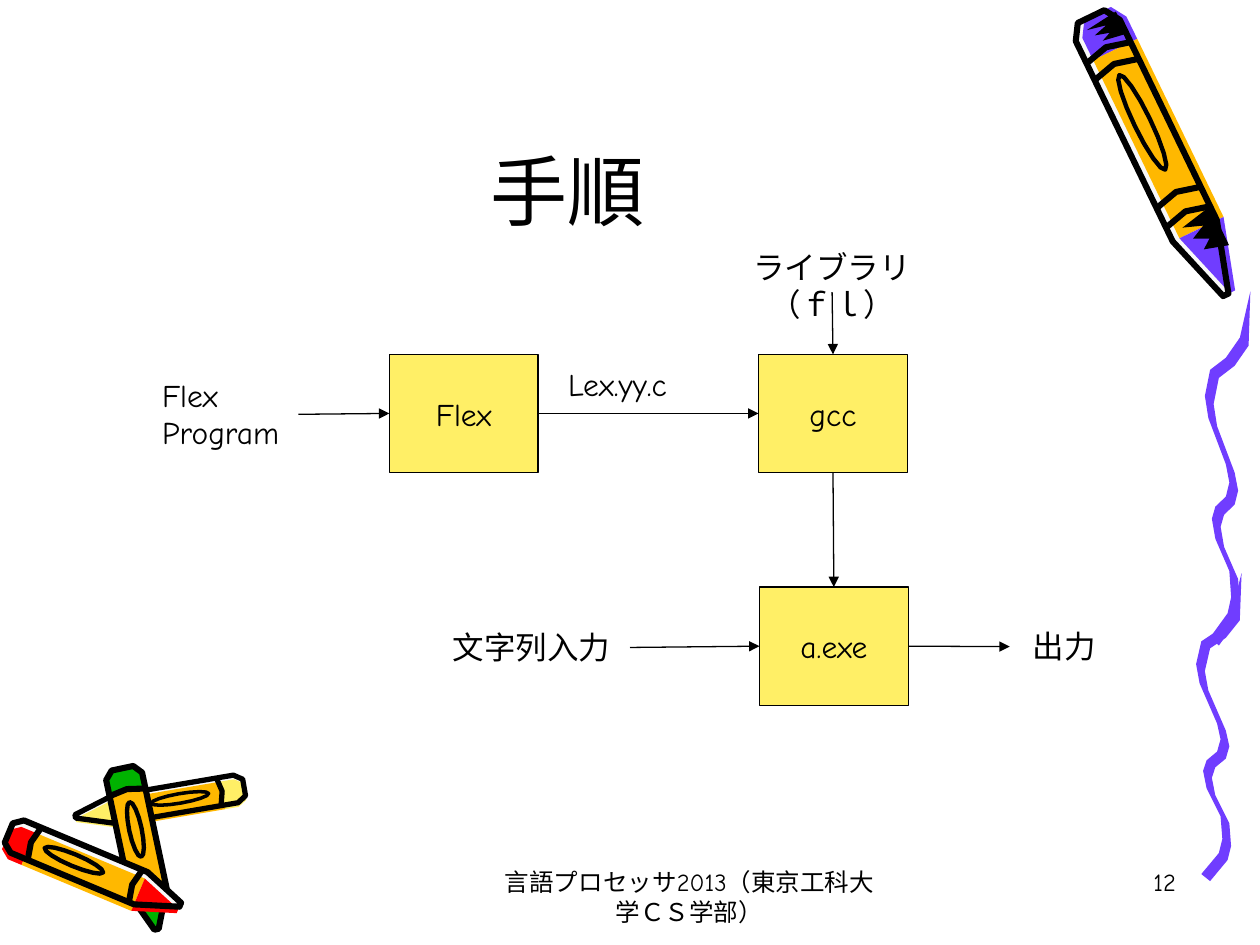
"""Build the slide showing how a Flex program is compiled and run."""
from dataclasses import dataclass
from math import cos, hypot, pi, sin

from lxml.etree import SubElement
from pptx import Presentation
from pptx.dml.color import RGBColor
from pptx.enum.shapes import MSO_CONNECTOR as Connector, MSO_SHAPE as Shape
from pptx.enum.text import MSO_ANCHOR as Anchor, PP_ALIGN as Align
from pptx.oxml.ns import qn
from pptx.util import Pt


@dataclass(frozen=True)
class Theme:
    font: str = "Comic Neue"
    title: int = 44
    body: int = 18
    footer: int = 14
    black: RGBColor = RGBColor(0x00, 0x00, 0x00)
    white: RGBColor = RGBColor(0xF8, 0xF8, 0xF8)
    yellow: RGBColor = RGBColor(0xFF, 0xEF, 0x66)
    orange: RGBColor = RGBColor(0xFF, 0xB8, 0x00)
    purple: RGBColor = RGBColor(0x70, 0x3D, 0xFF)
    red: RGBColor = RGBColor(0xFF, 0x00, 0x00)
    green: RGBColor = RGBColor(0x00, 0xB2, 0x00)


theme = Theme()
presentation = Presentation()
presentation.slide_width, presentation.slide_height = Pt(720), Pt(540)
slide = presentation.slides.add_slide(presentation.slide_layouts[6])


def draw_outline(points, origin, along, across, fill=None, stroke=0, close=True):
    placed = [
        tuple(Pt(origin[axis] + u * along[axis] + v * across[axis]) for axis in (0, 1))
        for u, v in points
    ]
    builder = slide.shapes.build_freeform(*placed[0], scale=1)
    builder.add_line_segments(placed[1:], close=close)
    shape = builder.convert_to_shape()
    shape.shadow.inherit = False
    if fill is None:
        shape.fill.background()
    else:
        shape.fill.solid()
        shape.fill.fore_color.rgb = fill
    if stroke:
        shape.line.color.rgb = theme.black
        shape.line.width = Pt(stroke)
    else:
        shape.line.fill.background()


def write_text(shape, text, size, align, anchor):
    frame = shape.text_frame
    frame.text = text
    frame.vertical_anchor = anchor
    for paragraph in frame.paragraphs:
        paragraph.alignment = align
        paragraph.font.name = theme.font
        paragraph.font.size = Pt(size)
        paragraph.font.color.rgb = theme.black


cap_end, barrel_end = 0.13, 0.77
butt = [(0.05, -0.5), (0, -0.3), (0, 0.3), (0.05, 0.5)]
point = [(barrel_end, 0.5), (1, 0.06), (1, -0.06), (barrel_end, -0.5)]
cap = butt + [(cap_end, 0.5), (cap_end, -0.5)]
barrel = [(cap_end, -0.5), (cap_end, 0.5), (barrel_end, 0.5), (barrel_end, -0.5)]
oval = [(0.38 + 0.17 * cos(step * pi / 8), 0.17 * sin(step * pi / 8)) for step in range(16)]
shade_depths = [-0.5, 0.2, -0.2, 0.1, -0.2, 0, -0.5]

crayons = [
    ((139.5, 450), (43, 466.5), 16, theme.yellow, -0.15, 3, [0.15, 0.74], []),
    ((70, 439), (89.5, 531), 21, theme.green, -0.05, 3.5, [0.15, 0.74], []),
    ((5, 476), (103, 517), 20, theme.red, 0.2, 3.5, [0.15, 0.74], []),
    ((623.5, 9.5), (700.5, 168.5), 28, theme.purple, -0.15, 3.5,
     [0.13, 0.19, 0.65, 0.72], [(0.02, 0.1), (0.72, 0.86)]),
]
for start, tip, width, color, misprint, ink, bands, shades in crayons:
    along = (tip[0] - start[0], tip[1] - start[1])
    length = hypot(*along)
    across = (-along[1] * width / length, along[0] * width / length)
    frame = start, along, across
    draw_outline(butt + point, *frame, fill=theme.white)
    for part, part_color in [(cap, color), (barrel, theme.orange), (point, color)]:
        draw_outline([(u, v + misprint) for u, v in part], *frame, fill=part_color)
    draw_outline(butt + point, *frame, stroke=ink)
    draw_outline(oval, *frame, stroke=ink - 1)
    for band in bands:
        draw_outline([(band, -0.5), (band - 0.02, 0), (band, 0.5)], *frame, stroke=ink, close=False)
    for first, last in shades:
        step = (last - first) / (len(shade_depths) - 1)
        zigzag = [(first + index * step, depth) for index, depth in enumerate(shade_depths)]
        draw_outline(zigzag, *frame, fill=theme.black)

ribbon_edge = [(3, 172), (13, 160), (15, 152), (14, 139), (6, 123), (4, 113), (6, 107), (12, 102),
               (14, 95), (12, 86), (2, 63), (0, 52), (3, 39), (12, 33), (20, 23), (26, 0)]
ribbon_thickness = (5, 4)
far_edge = [(x + ribbon_thickness[0], y + ribbon_thickness[1]) for x, y in ribbon_edge[-2::-1]]
for origin, stretch in [((683.5, 327.5), 1), ((688.5, 166.5), 1.15)]:
    draw_outline(ribbon_edge + far_edge, origin, (1, 0), (0, stretch), fill=theme.purple)

nodes = {}
for name, left, top in [("Flex", 222.5, 202.5), ("gcc", 433.5, 202.5), ("a.exe", 434, 335.5)]:
    box = slide.shapes.add_shape(Shape.RECTANGLE, Pt(left), Pt(top), Pt(85), Pt(67.5))
    box.fill.solid()
    box.fill.fore_color.rgb = theme.yellow
    box.line.color.rgb = theme.black
    box.line.width = Pt(0.75)
    box.shadow.inherit = False
    write_text(box, name, theme.body, Align.CENTER, Anchor.MIDDLE)
    box.text_frame.word_wrap = False
    nodes[name] = box

labels = [
    ("title", "手順", 54, 12.5, 540.5, 126, theme.title, Align.CENTER, Anchor.BOTTOM),
    ("program", "Flex\nProgram", 85.5, 211.5, 85, 50.5, theme.body, Align.LEFT, Anchor.TOP),
    ("c file", "Lex.yy.c", 317.5, 205, 101.5, 29, theme.body, Align.LEFT, Anchor.TOP),
    ("input", "文字列入力", 247.5, 355.5, 112.5, 29, theme.body, Align.CENTER, Anchor.TOP),
    ("output", "出力", 577, 355, 62.5, 29, theme.body, Align.CENTER, Anchor.TOP),
    ("library", "ライブラリ（ｆｌ）", 415.5, 138, 120, 29, theme.body, Align.CENTER, Anchor.TOP),
    ("page", "12", 529, 492, 150, 36, theme.footer, Align.RIGHT, Anchor.TOP),
    ("footer", "言語プロセッサ2013（東京工科大学ＣＳ学部）", 280, 492, 228, 36, theme.footer, Align.CENTER, Anchor.TOP),
]
for name, text, left, top, width, height, size, align, anchor in labels:
    label = slide.shapes.add_textbox(Pt(left), Pt(top), Pt(width), Pt(height))
    write_text(label, text, size, align, anchor)
    label.text_frame.word_wrap = True
    nodes[name] = label

program_line = nodes["program"].text_frame.paragraphs[1]
program_line.line_spacing = 0.5
program_line.space_before = Pt(9)

top_side, left_side, bottom_side, right_side = range(4)
for source, source_side, target, target_side in [
    ("program", right_side, "Flex", left_side),
    ("Flex", right_side, "gcc", left_side),
    ("library", bottom_side, "gcc", top_side),
    ("gcc", bottom_side, "a.exe", top_side),
    ("input", right_side, "a.exe", left_side),
    ("a.exe", right_side, "output", left_side),
]:
    arrow = slide.shapes.add_connector(Connector.STRAIGHT, Pt(0), Pt(0), Pt(0), Pt(0))
    arrow.begin_connect(nodes[source], source_side)
    arrow.end_connect(nodes[target], target_side)
    arrow.line.color.rgb = theme.black
    arrow.line.width = Pt(0.75)
    SubElement(arrow.line._get_or_add_ln(), qn("a:tailEnd"), type="triangle")
    SubElement(arrow._element.spPr, qn("a:effectLst"))

presentation.save("out.pptx")
